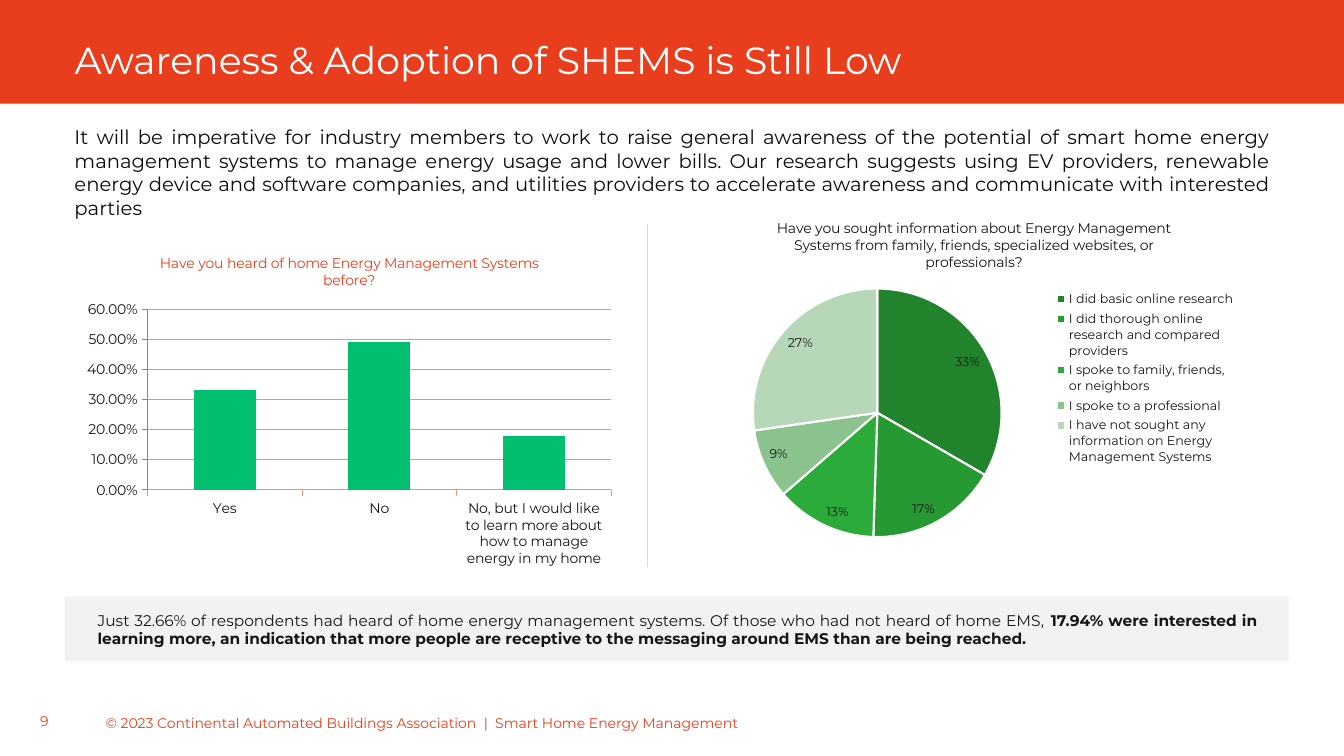
import pptx
import pptx.chart.data
import pptx.dml.color
import pptx.enum.chart
import pptx.enum.shapes
import pptx.enum.text
import pptx.oxml
import pptx.oxml.ns
import pptx.util
from pptx.util import Inches

FONT = "Montserrat"
ORANGE = "E83E1D"
INK = "161616"
GRID = "F0907F"


def color(value):
    return pptx.dml.color.RGBColor.from_string(value)


def style(font, size, value, bold=False):
    font.name = FONT
    font.size = pptx.util.Pt(size)
    font.color.rgb = color(value)
    font.bold = bold


presentation = pptx.Presentation()
presentation.slide_width = Inches(13.33)
presentation.slide_height = Inches(7.5)
slide = presentation.slides.add_slide(presentation.slide_layouts[5])

bands = [
    (0, 0, 13.33, 1.03, ORANGE),
    (0.64, 5.92, 12.14, 0.64, "F2F2F2"),
]
for left, top, width, height, fill in bands:
    band = slide.shapes.add_shape(
        pptx.enum.shapes.MSO_SHAPE.RECTANGLE,
        Inches(left), Inches(top), Inches(width), Inches(height))
    band.shadow.inherit = False
    band.fill.solid()
    band.fill.fore_color.rgb = color(fill)
    band.line.fill.background()

title = slide.shapes.title
title.left, title.top = Inches(0.64), Inches(0.37)
title.width, title.height = Inches(11.69), Inches(0.49)
title.text_frame.text = "Awareness & Adoption of SHEMS is Still Low"
title.text_frame.vertical_anchor = pptx.enum.text.MSO_ANCHOR.MIDDLE
title_paragraph = title.text_frame.paragraphs[0]
title_paragraph.alignment = pptx.enum.text.PP_ALIGN.LEFT
title_paragraph.line_spacing = 0.9
style(title_paragraph.runs[0].font, 27, "FFFFFF")
slide.shapes._spTree.append(title._element)

LEFT = pptx.enum.text.PP_ALIGN.LEFT
JUSTIFY = pptx.enum.text.PP_ALIGN.JUSTIFY
TOP = pptx.enum.text.MSO_ANCHOR.TOP
MIDDLE = pptx.enum.text.MSO_ANCHOR.MIDDLE
texts = [
    (0.64, 1.19, 12.06, 1.04, JUSTIFY, TOP, 14, "0D0D0D", [
        "It will be imperative for industry members to work to raise general awareness of the "
        "potential of smart home energy management systems to manage energy usage and lower bills. "
        "Our research suggests using EV providers, renewable energy device and software companies, "
        "and utilities providers to accelerate awareness and communicate with interested parties"]),
    (0.87, 6.01, 11.7, 0.47, JUSTIFY, TOP, 11, INK, [
        "Just 32.66% of respondents had heard of home energy management systems. "
        "Of those who had not heard of home EMS, ",
        "17.94% were interested in learning more, an indication that more people are receptive "
        "to the messaging around EMS than are being reached."]),
    (0.95, 6.97, 8.26, 0.4, LEFT, MIDDLE, 10, ORANGE, [
        "© 2023 Continental Automated Buildings Association  |  Smart Home Energy Management"]),
    (0.3, 6.96, 0.68, 0.39, LEFT, MIDDLE, 10, ORANGE, ["9"]),
]
for left, top, width, height, alignment, anchor, size, ink, pieces in texts:
    box = slide.shapes.add_textbox(Inches(left), Inches(top), Inches(width), Inches(height))
    box.text_frame.word_wrap = True
    box.text_frame.vertical_anchor = anchor
    paragraph = box.text_frame.paragraphs[0]
    paragraph.alignment = alignment
    for index, piece in enumerate(pieces):
        run = paragraph.add_run()
        run.text = piece
        style(run.font, size, ink, bold=index == 1)

heard_data = pptx.chart.data.CategoryChartData(number_format="0.00%")
heard_data.categories = [
    "Yes", "No", "No, but I would like to learn more about how to manage energy in my home"]
heard_data.add_series("Series 1", [0.33, 0.49, 0.18])
heard_chart = slide.shapes.add_chart(
    pptx.enum.chart.XL_CHART_TYPE.COLUMN_CLUSTERED,
    Inches(0.76), Inches(2.37), Inches(5.41), Inches(3.32), heard_data).chart

sought_data = pptx.chart.data.CategoryChartData()
sought_data.categories = [
    "I did basic online research",
    "I did thorough online research and compared providers",
    "I spoke to family, friends, or neighbors",
    "I spoke to a professional",
    "I have not sought any information on Energy Management Systems"]
sought_data.add_series("Series 1", [33, 17, 13, 9, 27])
sought_chart = slide.shapes.add_chart(
    pptx.enum.chart.XL_CHART_TYPE.PIE,
    Inches(6.92), Inches(2.02), Inches(5.48), Inches(3.46), sought_data).chart

headings = [
    (heard_chart, "Have you heard of home Energy Management Systems before?", ORANGE),
    (sought_chart, "Have you sought information about Energy Management Systems from family, "
                   "friends, specialized websites, or professionals?", INK),
]
for chart, heading, ink in headings:
    style(chart.font, 10, ORANGE)
    chart.has_title = True
    chart.chart_title.include_in_layout = False
    chart.chart_title.text_frame.text = heading
    style(chart.chart_title.text_frame.paragraphs[0].runs[0].font, 10, ink)

heard_chart.has_legend = False
heard_plot = heard_chart.plots[0]
heard_plot.gap_width = 150
heard_plot.vary_by_categories = False
bars = heard_plot.series[0].format.fill
bars.solid()
bars.fore_color.rgb = color("00BF6F")

value_axis = heard_chart.value_axis
value_axis.minimum_scale = 0
value_axis.maximum_scale = 0.6
value_axis.major_unit = 0.1
value_axis.has_major_gridlines = True
value_axis.tick_labels.number_format = "0.00%"
value_axis.tick_labels.number_format_is_linked = False
for axis in (value_axis, heard_chart.category_axis):
    axis.major_tick_mark = pptx.enum.chart.XL_TICK_MARK.OUTSIDE
    style(axis.tick_labels.font, 10, INK)
heard_chart.category_axis.format.line.color.rgb = color(GRID)
heard_chart.category_axis.format.line.width = pptx.util.Pt(0.75)
gridlines = heard_chart._chartSpace.xpath("c:chart/c:plotArea/c:valAx/c:majorGridlines")[0]
gridlines.append(pptx.oxml.parse_xml(
    f'<c:spPr {pptx.oxml.ns.nsdecls("c", "a")}><a:ln w="9525"><a:solidFill>'
    f'<a:srgbClr val="{GRID}"/></a:solidFill><a:prstDash val="solid"/></a:ln></c:spPr>'))

sought_plot = sought_chart.plots[0]
sought_plot.vary_by_categories = True
slices = ["21832C", "269933", "2BAC3A", "8AC38D", "B7D7B9"]
for index, fill in enumerate(slices):
    wedge = sought_plot.series[0].points[index].format
    wedge.fill.solid()
    wedge.fill.fore_color.rgb = color(fill)
    wedge.line.color.rgb = color("FFFFFF")
    wedge.line.width = pptx.util.Pt(1.5)

sought_plot.has_data_labels = True
labels = sought_plot.data_labels
labels.show_percentage = True
labels.show_value = False
labels.number_format = "0%"
labels.number_format_is_linked = False
labels.position = pptx.enum.chart.XL_LABEL_POSITION.INSIDE_END
style(labels.font, 9, INK)

sought_chart.has_legend = True
sought_chart.legend.position = pptx.enum.chart.XL_LEGEND_POSITION.RIGHT
sought_chart.legend.include_in_layout = False
style(sought_chart.legend.font, 9, INK)

layouts = [
    (heard_chart, "c:plotArea", 0, (0.13, 0.21, 0.85, 0.54)),
    (sought_chart, "c:plotArea", 0, (0.1, 0.24, 0.45, 0.72)),
    (sought_chart, "c:legend", 1, (0.65, 0.24, 0.32, 0.52)),
]
for chart, tag, position, (x, y, width, height) in layouts:
    area = chart._chartSpace.xpath("c:chart/" + tag)[0]
    for old_layout in area.findall(pptx.oxml.ns.qn("c:layout")):
        area.remove(old_layout)
    target = '<c:layoutTarget val="inner"/>' if tag == "c:plotArea" else ""
    area.insert(position, pptx.oxml.parse_xml(
        f'<c:layout {pptx.oxml.ns.nsdecls("c")}><c:manualLayout>{target}'
        f'<c:xMode val="edge"/><c:yMode val="edge"/><c:x val="{x}"/><c:y val="{y}"/>'
        f'<c:w val="{width}"/><c:h val="{height}"/></c:manualLayout></c:layout>'))

divider = slide.shapes.add_connector(
    pptx.enum.shapes.MSO_CONNECTOR.STRAIGHT,
    Inches(6.42), Inches(2.22), Inches(6.42), Inches(5.63))
divider.line.color.rgb = color("D9D9D9")
divider.line.width = pptx.util.Pt(0.5)
divider._element.spPr.append(
    pptx.oxml.parse_xml(f'<a:effectLst {pptx.oxml.ns.nsdecls("a")}/>'))

presentation.save("out.pptx")
